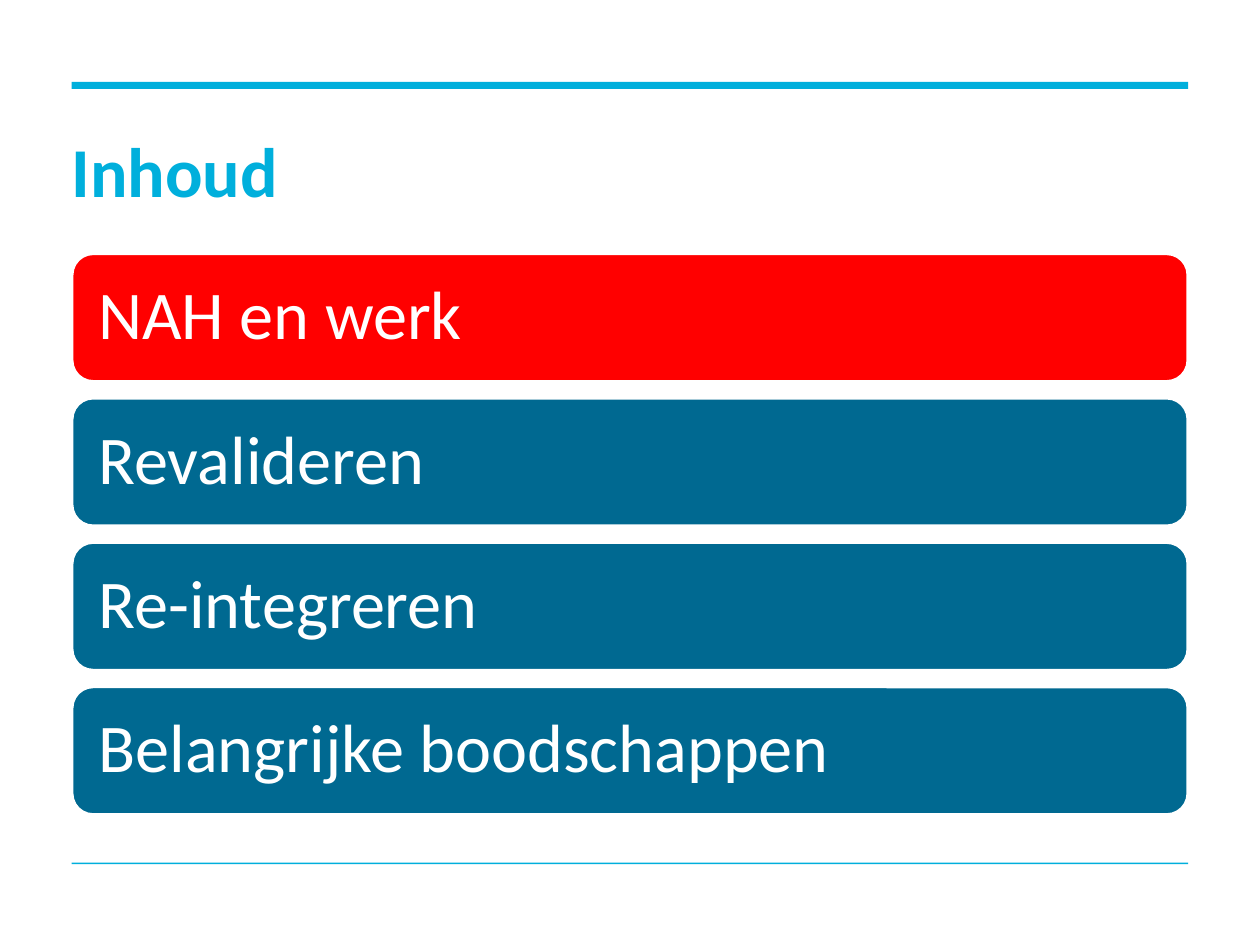
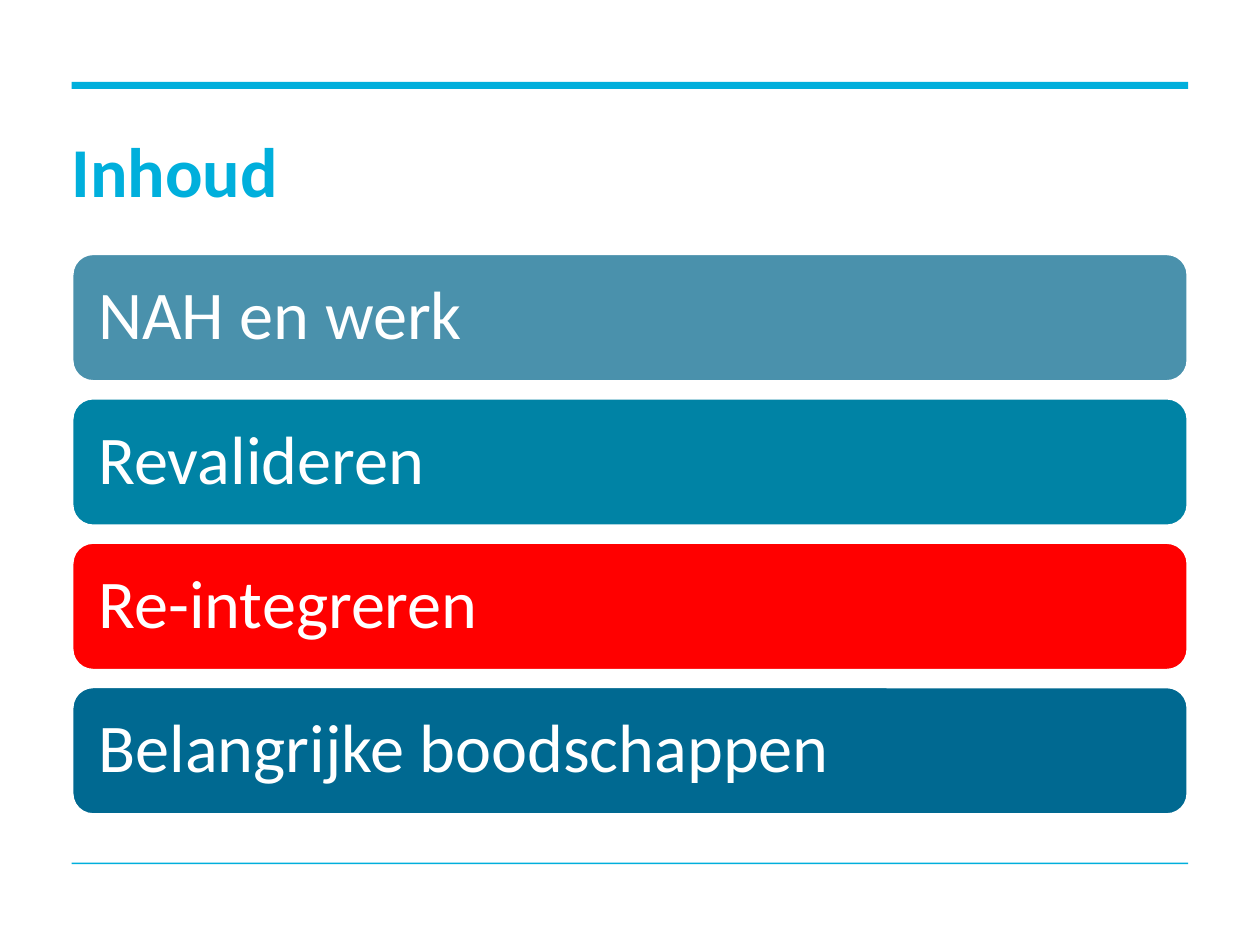
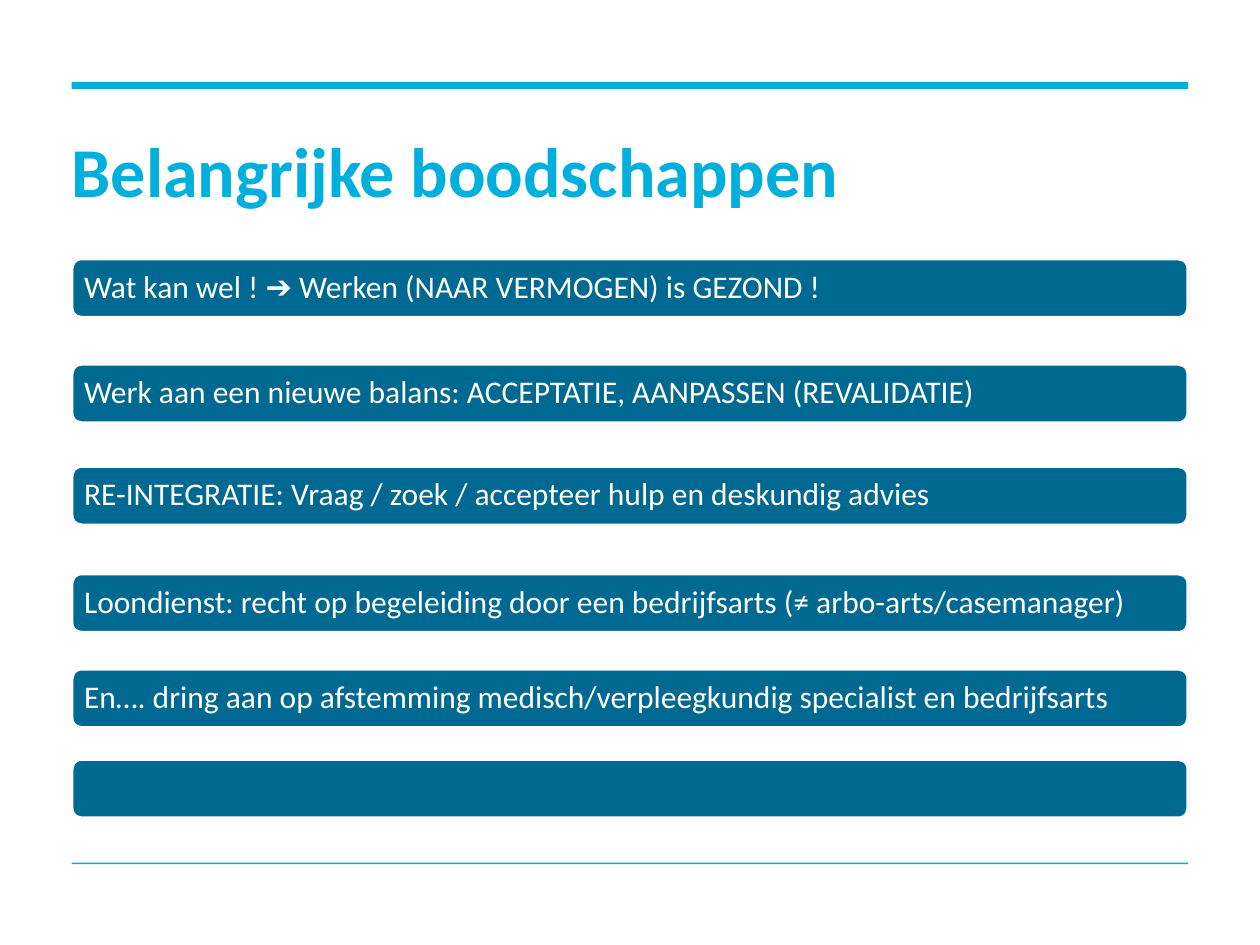
import pptx
import pptx.util
import pptx.dml.color
import pptx.enum.shapes
import pptx.enum.text

Pt = pptx.util.Pt
RGBColor = pptx.dml.color.RGBColor
Shape = pptx.enum.shapes.MSO_SHAPE
Anchor = pptx.enum.text.MSO_ANCHOR
Align = pptx.enum.text.PP_ALIGN

CYAN = RGBColor(0x00, 0xAF, 0xDC)
NAVY = RGBColor(0x00, 0x69, 0x91)
TEAL = RGBColor(0x00, 0x83, 0xA5)
STEEL = RGBColor(0x4A, 0x91, 0xAC)
RED = RGBColor(0xFF, 0x00, 0x00)
WHITE = RGBColor(0xFF, 0xFF, 0xFF)

FONT = "Calibri"
LEFT = 41
WIDTH = 638

TOPICS = ["NAH en werk", "Revalideren", "Re-integreren", "Belangrijke boodschappen"]
TOPIC_TOP = 144.8
TOPIC_STEP = 82.5

# Top of each bar in points, with its message; the last bar is empty.
POINTS = [
    (147.8, "Wat kan wel ! ➔ Werken (NAAR VERMOGEN) is GEZOND !"),
    (208, "Werk aan een nieuwe balans: ACCEPTATIE, AANPASSEN (REVALIDATIE)"),
    (266.4, "RE-INTEGRATIE: Vraag / zoek / accepteer hulp en deskundig advies"),
    (327.8, "Loondienst: recht op begeleiding door een bedrijfsarts (≠ arbo-arts/casemanager)"),
    (382.2, "En…. dring aan op afstemming medisch/verpleegkundig specialist en bedrijfsarts"),
    (433.8, ""),
]


def set_text(shape, text, size, color, inset, spacing, bold=False):
    frame = shape.text_frame
    frame.word_wrap = True
    frame.vertical_anchor = Anchor.MIDDLE
    frame.margin_left = frame.margin_right = Pt(inset)
    frame.margin_top = frame.margin_bottom = Pt(inset)
    frame.text = text
    para = frame.paragraphs[0]
    para.alignment = Align.LEFT
    para.line_spacing = spacing
    for run in para.runs:
        run.font.name = FONT
        run.font.size = Pt(size)
        run.font.bold = bold
        run.font.color.rgb = color


def add_block(slide, kind, top, height, fill):
    """Add a filled shape as wide as the content area."""
    shape = slide.shapes.add_shape(kind, Pt(LEFT), Pt(top), Pt(WIDTH), Pt(height))
    shape.shadow.inherit = False
    shape.fill.solid()
    shape.fill.fore_color.rgb = fill
    shape.line.fill.background()
    return shape


def add_bar(slide, text, top, height, fill, size):
    bar = add_block(slide, Shape.ROUNDED_RECTANGLE, top, height, fill)
    bar.line.color.rgb = WHITE
    bar.line.width = Pt(2)
    if text:
        set_text(bar, text, size, WHITE, 0.3 * size, 0.9)


def add_page(deck, title):
    """Add a slide with its two rules and its title."""
    slide = deck.slides.add_slide(deck.slide_layouts[6])
    add_block(slide, Shape.RECTANGLE, 46.8, 4, CYAN)
    add_block(slide, Shape.RECTANGLE, 493, 0.8, CYAN)
    box = slide.shapes.add_textbox(Pt(LEFT), Pt(79), Pt(WIDTH), Pt(42))
    set_text(box, title, 40, CYAN, 0, Pt(42), bold=True)
    return slide


def add_agenda(deck, fills):
    slide = add_page(deck, "Inhoud")
    for row, (topic, fill) in enumerate(zip(TOPICS, fills)):
        add_bar(slide, topic, TOPIC_TOP + row * TOPIC_STEP, 73.4, fill, 39)


def add_points(deck):
    slide = add_page(deck, "Belangrijke boodschappen")
    for top, text in POINTS:
        add_bar(slide, text, top, 33.8, NAVY, 18)


def main():
    deck = pptx.Presentation()
    deck.slide_width = Pt(720)
    deck.slide_height = Pt(540)
    add_agenda(deck, [RED, NAVY, NAVY, NAVY])
    add_agenda(deck, [STEEL, TEAL, RED, NAVY])
    add_points(deck)
    deck.save("out.pptx")


if __name__ == "__main__":
    main()
